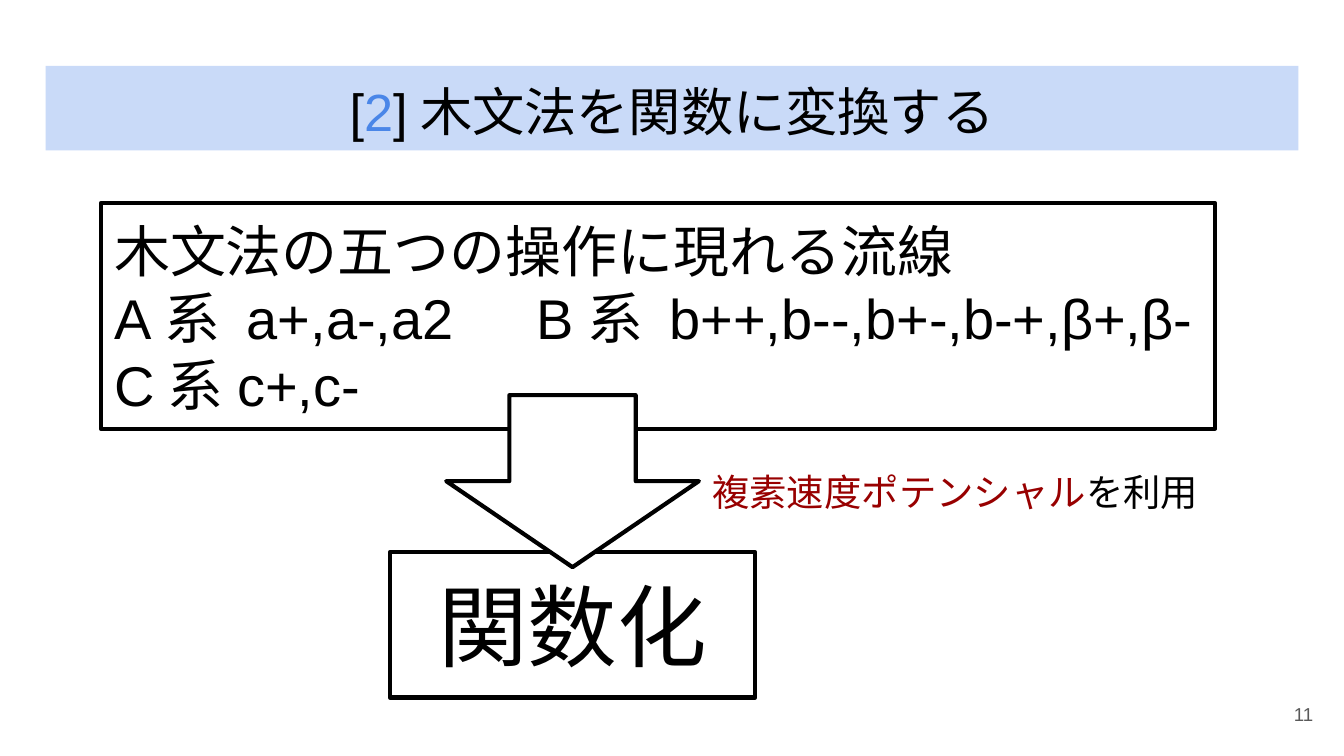
"""Build the slide on converting a tree grammar into functions."""
from dataclasses import dataclass

import pptx
import pptx.dml.color
import pptx.enum.shapes
import pptx.enum.text
import pptx.shapes.autoshape
import pptx.slide
import pptx.util

BLACK = pptx.dml.color.RGBColor(0x00, 0x00, 0x00)
WHITE = pptx.dml.color.RGBColor(0xFF, 0xFF, 0xFF)
PALE_BLUE = pptx.dml.color.RGBColor(0xC9, 0xDA, 0xF8)
BLUE = pptx.dml.color.RGBColor(0x4A, 0x86, 0xE8)
DARK_RED = pptx.dml.color.RGBColor(0x98, 0x00, 0x00)
GRAY = pptx.dml.color.RGBColor(0x59, 0x59, 0x59)
FONT = "Arial"
MARGIN = pptx.util.Inches(0.1)
LEFT = pptx.enum.text.PP_ALIGN.LEFT
CENTER = pptx.enum.text.PP_ALIGN.CENTER
RIGHT = pptx.enum.text.PP_ALIGN.RIGHT
TOP = pptx.enum.text.MSO_ANCHOR.TOP
MIDDLE = pptx.enum.text.MSO_ANCHOR.MIDDLE


@dataclass(frozen=True)
class Area:
    left: float
    top: float
    width: float
    height: float

    def lengths(self) -> tuple[pptx.util.Length, ...]:
        return tuple(map(pptx.util.Inches, (self.left, self.top, self.width, self.height)))


@dataclass(frozen=True)
class Run:
    text: str
    color: pptx.dml.color.RGBColor = BLACK


@dataclass(frozen=True)
class Content:
    lines: tuple[tuple[Run, ...], ...]
    size: int
    align: pptx.enum.text.PP_ALIGN = LEFT
    anchor: pptx.enum.text.MSO_ANCHOR = TOP


def write_text(shape: pptx.shapes.autoshape.Shape, content: Content) -> None:
    frame = shape.text_frame
    frame.word_wrap = True
    frame.auto_size = pptx.enum.text.MSO_AUTO_SIZE.NONE
    frame.vertical_anchor = content.anchor
    frame.margin_left = frame.margin_right = MARGIN
    frame.margin_top = frame.margin_bottom = MARGIN
    for index, line in enumerate(content.lines):
        paragraph = frame.add_paragraph() if index else frame.paragraphs[0]
        paragraph.alignment = content.align
        paragraph.font.name = FONT
        paragraph.font.size = pptx.util.Pt(content.size)
        for part in line:
            run = paragraph.add_run()
            run.text = part.text
            run.font.color.rgb = part.color


def add_title(slide: pptx.slide.Slide, area: Area, content: Content) -> None:
    title = slide.shapes.title
    title.left, title.top, title.width, title.height = area.lengths()
    title.fill.solid()
    title.fill.fore_color.rgb = PALE_BLUE
    write_text(title, content)


def add_outlined(
    slide: pptx.slide.Slide, kind: pptx.enum.shapes.MSO_SHAPE, area: Area
) -> pptx.shapes.autoshape.Shape:
    shape = slide.shapes.add_shape(kind, *area.lengths())
    shape.shadow.inherit = False
    shape.fill.background()
    shape.line.color.rgb = BLACK
    shape.line.width = pptx.util.Pt(2.25)
    return shape


def add_box(slide: pptx.slide.Slide, area: Area, content: Content) -> None:
    box = add_outlined(slide, pptx.enum.shapes.MSO_SHAPE.RECTANGLE, area)
    write_text(box, content)


def add_arrow(slide: pptx.slide.Slide, area: Area) -> None:
    arrow = add_outlined(slide, pptx.enum.shapes.MSO_SHAPE.DOWN_ARROW, area)
    arrow.fill.solid()
    arrow.fill.fore_color.rgb = WHITE


def add_label(slide: pptx.slide.Slide, area: Area, content: Content) -> None:
    write_text(slide.shapes.add_textbox(*area.lengths()), content)


def main() -> None:
    presentation = pptx.Presentation()
    presentation.slide_width = pptx.util.Inches(10)
    presentation.slide_height = presentation.slide_width * 9 // 16
    slide = presentation.slides.add_slide(presentation.slide_layouts[5])

    title = (Run("["), Run("2", BLUE), Run("]木文法を関数に変換する"))
    add_title(slide, Area(0.34, 0.49, 9.32, 0.63), Content((title,), 28, CENTER))
    add_label(slide, Area(9.27, 5.1, 0.6, 0.43),
              Content(((Run("11", GRAY),),), 10, RIGHT, MIDDLE))

    streamlines = (
        (Run("木文法の五つの操作に現れる流線"),),
        (Run("A系 a+,a-,a2　B系 b++,b--,b+-,b-+,β+,β-"),),
        (Run("C系c+,c-"),),
    )
    add_box(slide, Area(0.75, 1.51, 8.29, 1.68), Content(streamlines, 30))
    add_box(slide, Area(2.9, 4.11, 2.72, 1.08),
            Content(((Run("関数化"),),), 48, CENTER, MIDDLE))
    add_arrow(slide, Area(3.32, 2.94, 1.88, 1.28))

    method = (Run("複素速度ポテンシャル", DARK_RED), Run("を利用"))
    add_label(slide, Area(5.2, 3.39, 4.02, 0.63), Content((method,), 20))

    presentation.save("out.pptx")


if __name__ == "__main__":
    main()
